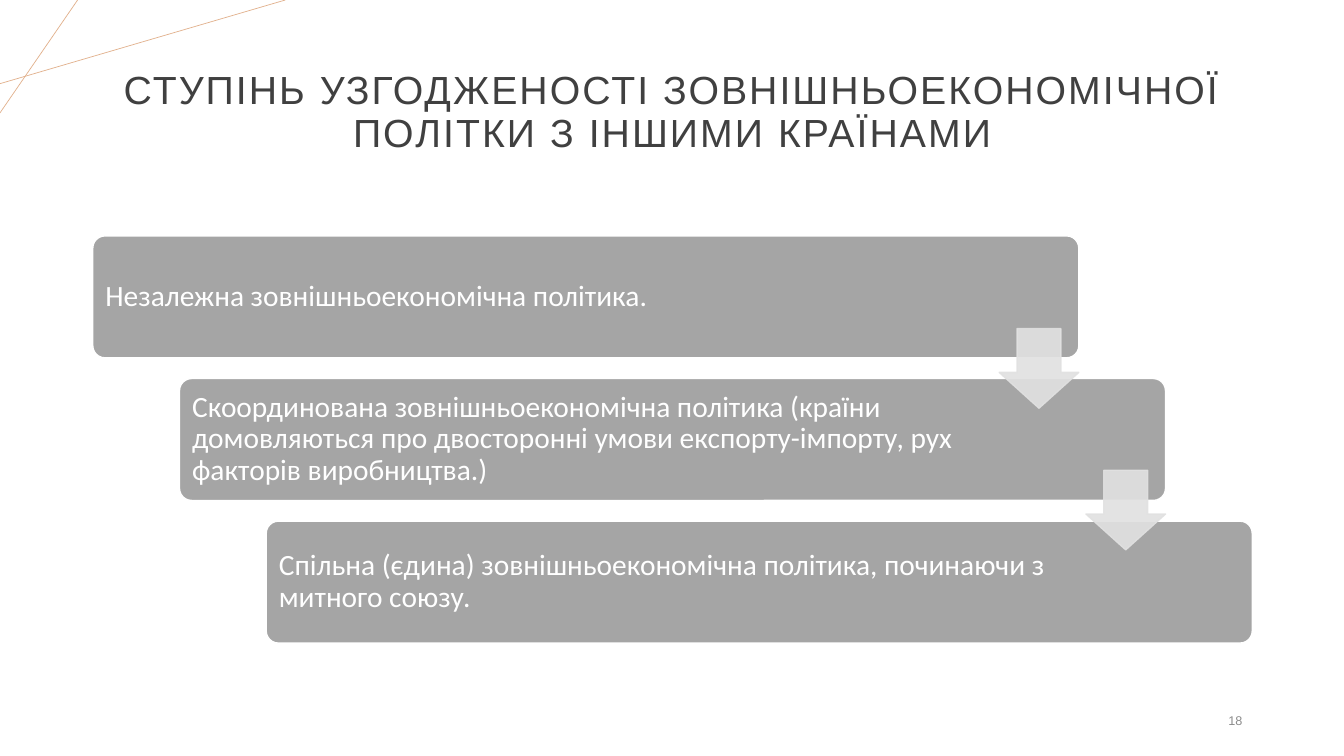
from lxml import etree
from pptx import Presentation
from pptx.dml.color import RGBColor
from pptx.enum.shapes import MSO_CONNECTOR, MSO_SHAPE
from pptx.enum.text import MSO_ANCHOR, PP_ALIGN
from pptx.oxml.ns import qn
from pptx.util import Pt

PX = 9144  # 100 px to the inch
LINE = MSO_CONNECTOR.STRAIGHT
ROUNDED, DOWN_ARROW = MSO_SHAPE.ROUNDED_RECTANGLE, MSO_SHAPE.DOWN_ARROW
MIDDLE = MSO_ANCHOR.MIDDLE
LEFT, CENTER, RIGHT = PP_ALIGN.LEFT, PP_ALIGN.CENTER, PP_ALIGN.RIGHT

TITLE = "СТУПІНЬ УЗГОДЖЕНОСТІ ЗОВНІШНЬОЕКОНОМІЧНОЇ ПОЛІТКИ З ІНШИМИ КРАЇНАМИ"
# Step text and the width left for it
STEPS = [
    ("Незалежна зовнішньоекономічна політика.", 847),
    ("Скоординована зовнішньоекономічна політика (країни домовляються про "
     "двосторонні умови експорту-імпорту, рух факторів виробництва.)", 805),
    ("Спільна (єдина) зовнішньоекономічна політика, починаючи з митного союзу.", 805),
]


def emu(*lengths):
    return [round(length * PX) for length in lengths]


def color(value):
    return RGBColor.from_string(value)


def write(shape, text, size, font, ink, align, insets, line_spacing=1.0, tracking=0):
    frame = shape.text_frame
    frame.word_wrap = True
    frame.vertical_anchor = MIDDLE
    (frame.margin_left, frame.margin_top,
     frame.margin_right, frame.margin_bottom) = emu(*insets)
    paragraph = frame.paragraphs[0]
    paragraph.alignment = align
    paragraph.line_spacing = line_spacing
    run = paragraph.add_run()
    run.text = text
    run.font.size = Pt(size)
    run.font.name = font
    run.font.color.rgb = color(ink)
    if tracking:
        run.font._element.set("spc", str(tracking))


def add_label(slide, box, *text_style, **spacing):
    shape = slide.shapes.add_textbox(*emu(*box))
    write(shape, *text_style, (10, 5, 10, 5), **spacing)


def add_block(slide, preset, box, adjustments, fill, outline):
    shape = slide.shapes.add_shape(preset, *emu(*box))
    shape.shadow.inherit = False
    for index, value in enumerate(adjustments):
        shape.adjustments[index] = value
    shape.fill.solid()
    shape.fill.fore_color.rgb = color(fill)
    shape.line.color.rgb = color(outline)
    shape.line.width = Pt(1)
    return shape


def add_corner_lines(slide, box):
    left, top, width, height = box
    ends = [(left, top + 83, left + width, top),
            (left + 77, top, left, top + height)]
    for points in ends:
        connector = slide.shapes.add_connector(LINE, *emu(*points))
        connector.line.color.rgb = color("E2B18D")
        connector.line.width = Pt(0.5)
        etree.SubElement(connector._element.spPr, qn("a:effectLst"))


def add_staircase(slide, box):
    left, top, width, height = box
    step_width, step_height, arrow_size = 978, 121, 79
    last = len(STEPS) - 1
    shift = (width - step_width) / last
    drop = (height - step_height) / last

    # Steps
    for index, (text, text_width) in enumerate(STEPS):
        step = add_block(slide, ROUNDED,
                         (left + index * shift, top + index * drop, step_width, step_height),
                         [0.1], "A5A5A5", "FFFFFF")
        right_inset = step_width - text_width + 3
        write(step, text, 21, "Calibri", "FFFFFF", LEFT, (9, 9, right_inset, 9),
              line_spacing=0.9)

    # Translucent arrows over the joints, right-aligned with the step above
    for index in range(last):
        arrow = add_block(slide, DOWN_ARROW,
                          (left + index * shift + step_width - arrow_size,
                           top + 92 + index * (drop - 1), arrow_size, arrow_size),
                          [0.55, 0.45], "E1E1E1", "E1E1E1")
        # The preset lists head length first, shaft width second
        arrow.adjustments[0], arrow.adjustments[1] = 0.55, 0.45
        for tone in arrow._element.spPr.iter(qn("a:srgbClr")):
            etree.SubElement(tone, qn("a:alpha")).set("val", "90000")


def build_slide(presentation):
    slide = presentation.slides.add_slide(presentation.slide_layouts[6])
    add_corner_lines(slide, (0, 0, 283, 112))
    add_label(slide, (92, 40, 1150, 145), TITLE, 28, "Arial", "404040", CENTER,
              line_spacing=0.9, tracking=150)
    add_label(slide, (942, 695, 300, 40), "18", 9, "Arial", "8C8C8C", RIGHT)
    add_staircase(slide, (92, 234, 1150, 404))


def main():
    presentation = Presentation()
    presentation.slide_width, presentation.slide_height = emu(1333, 750)
    build_slide(presentation)
    presentation.save("out.pptx")


if __name__ == "__main__":
    main()
